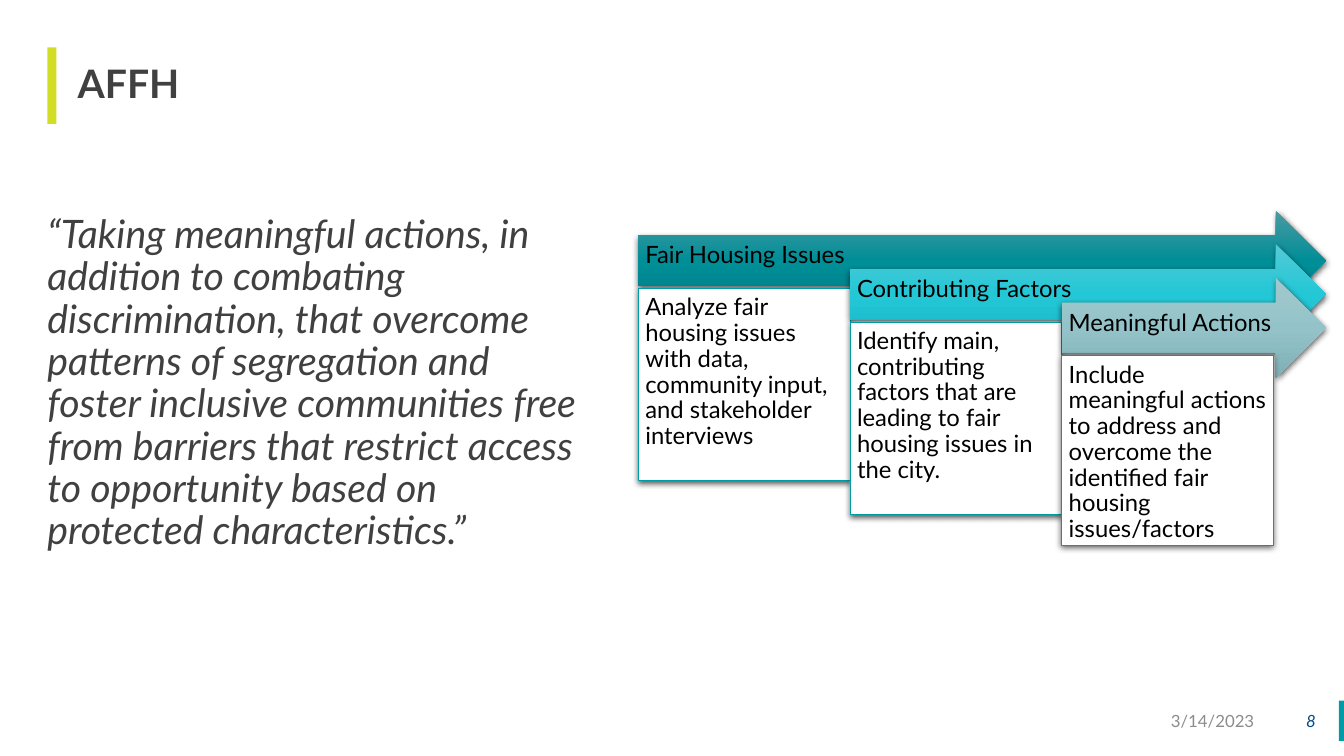
from dataclasses import dataclass

from pptx import Presentation
from pptx.dml.color import RGBColor
from pptx.enum.shapes import MSO_SHAPE
from pptx.enum.text import MSO_ANCHOR, MSO_AUTO_SIZE, PP_ALIGN
from pptx.oxml import parse_xml
from pptx.oxml.ns import nsdecls, qn
from pptx.util import Inches, Pt

ARROW, RECTANGLE = MSO_SHAPE.RIGHT_ARROW, MSO_SHAPE.RECTANGLE
TOP, MIDDLE = MSO_ANCHOR.TOP, MSO_ANCHOR.MIDDLE
LEFT, RIGHT = PP_ALIGN.LEFT, PP_ALIGN.RIGHT
FIXED = MSO_AUTO_SIZE.NONE


@dataclass(frozen=True)
class Theme:
    font: str = "Lato"
    ink: str = "404040"
    black: str = "000000"
    white: str = "FFFFFF"
    muted: str = "8C8C8C"
    navy: str = "004B87"
    teal: str = "009CA6"
    lime: str = "D2DE26"
    heading: int = 28
    step: int = 17
    footer: int = 12


class Deck:
    """Holds the theme and the current slide; places are percent of the slide."""

    def __init__(self, theme):
        self.theme = theme
        self.show = Presentation()
        self.show.slide_width, self.show.slide_height = Inches(13.33), Inches(7.5)
        self.slide = self.show.slides.add_slide(self.show.slide_layouts[1])

    def lengths(self, place):
        sides = (self.show.slide_width, self.show.slide_height) * 2
        return [round(side * share / 100) for side, share in zip(sides, place)]

    def set_text(self, shape, text, size, color, insets, anchor=MIDDLE, align=LEFT,
                 spacing=0.9, **style):
        frame = shape.text_frame
        frame.text = text
        margins = zip(("left", "top", "right", "bottom"), insets)
        layout = {f"margin_{side}": Inches(inset) for side, inset in margins}
        layout |= {"word_wrap": True, "auto_size": FIXED, "vertical_anchor": anchor}
        for name, value in layout.items():
            setattr(frame, name, value)
        paragraph = frame.paragraphs[0]
        for name, value in {"alignment": align, "line_spacing": spacing,
                            "space_before": Pt(0)}.items():
            setattr(paragraph, name, value)
        font = paragraph.runs[0].font
        for name, value in {"name": self.theme.font, "size": Pt(size), **style}.items():
            setattr(font, name, value)
        font.color.rgb = RGBColor.from_string(color)

    def placeholder(self, index, place, text, insets, **style):
        holder = self.slide.placeholders[index]
        for name, value in zip(("left", "top", "width", "height"), self.lengths(place)):
            setattr(holder, name, value)
        self.set_text(holder, text, self.theme.heading, self.theme.ink, insets, **style)
        return holder

    def title(self, place, text):
        self.placeholder(0, place, text, (0.2, 0, 0, 0), bold=True)

    def quote(self, place, text):
        holder = self.placeholder(1, place, text, (0, 0, 0, 0), italic=True)
        properties = holder.text_frame.paragraphs[0]._p.get_or_add_pPr()
        for name in ("marL", "indent"):
            properties.set(name, "0")
        properties.append(parse_xml(f"<a:buNone {nsdecls('a')}/>"))

    def footer(self, place, text, color, **style):
        box = self.slide.shapes.add_textbox(*self.lengths(place))
        self.set_text(box, text, self.theme.footer, color, (0.1, 0.05, 0.1, 0.05),
                      align=RIGHT, spacing=1.0, **style)

    def shape(self, kind, place, fill=None, line=None):
        shape = self.slide.shapes.add_shape(kind, *self.lengths(place))
        shape.shadow.inherit = False
        if fill:
            shape.fill.solid()
            shape.fill.fore_color.rgb = RGBColor.from_string(fill)
        if line:
            shape.line.color.rgb = RGBColor.from_string(line)
            shape.line.width = Pt(0.5)
        else:
            shape.line.fill.background()
        return shape

    def cast_shadow(self, shape):
        effects = shape.element.spPr.find(qn("a:effectLst"))
        effects.append(parse_xml(
            f'<a:outerShdw {nsdecls("a")} blurRad="{Pt(4.5)}" dist="{Pt(1.5)}" '
            f'dir="5400000" algn="ctr" rotWithShape="0">'
            f'<a:srgbClr val="{self.theme.black}"><a:alpha val="63000"/></a:srgbClr>'
            "</a:outerShdw>"))

    def arrow(self, place, text, shades):
        arrow = self.shape(ARROW, place)
        stops = "".join(f'<a:gs pos="{half * 50000}"><a:srgbClr val="{shade}"/></a:gs>'
                        for half, shade in enumerate(shades))
        arrow.element.spPr.find(qn("a:prstGeom")).addnext(parse_xml(
            f'<a:gradFill {nsdecls("a")} rotWithShape="1"><a:gsLst>{stops}</a:gsLst>'
            '<a:lin ang="5400000" scaled="0"/></a:gradFill>'))
        self.cast_shadow(arrow)
        self.set_text(arrow, text, self.theme.step, self.theme.black,
                      (0.07, 0.07, 0.28, 0.16))

    def card(self, place, text):
        card = self.shape(RECTANGLE, place, self.theme.white, self.theme.teal)
        self.cast_shadow(card)
        self.set_text(card, text, self.theme.step, self.theme.black, (0.07,) * 4,
                      anchor=TOP)


# Each step: heading, gradient shades, explanation, card height
STEPS = [
    ("Fair Housing Issues", ("4B9AA2", "008E97", "007E86"),
     "Analyze fair housing issues with data, community input, "
     "and stakeholder interviews", 25.47),
    ("Contributing Factors", ("53CAD7", "23C7D6", "18B7C5"),
     "Identify main, contributing factors that are leading to fair "
     "housing issues in the city.", 25.47),
    ("Meaningful Actions", ("A2C9CD", "93C3C9", "7FB0B6"),
     "Include meaningful actions to address and overcome the identified "
     "fair housing issues/factors", 25.07),
]
STEPS_LEFT, STEPS_TOP, STEPS_END = 47.49, 27.87, 98.65
COLUMN, ROW = 15.75, 4.45
ARROW_HEIGHT, CARD_DROP = 13.2, 10.27
FOOTER_TOP, FOOTER_HEIGHT = 92.67, 5.33


def main():
    theme = Theme()
    deck = Deck(theme)

    # Accent bars
    deck.shape(RECTANGLE, (99.62, FOOTER_TOP, 0.38, FOOTER_HEIGHT), theme.teal)
    deck.shape(RECTANGLE, (3.53, 6.27, 0.68, 10.13), theme.lime)

    # Title and definition
    deck.title((4.28, 6.27, 92.35, 10.13), "AFFH")
    deck.quote((3.53, 19.87, 40.21, 61.87),
               "“Taking meaningful actions, in addition to combating discrimination, "
               "that overcome patterns of segregation and foster inclusive communities "
               "free from barriers that restrict access to opportunity based on "
               "protected characteristics.”")

    # Date and page number
    deck.footer((71.57, FOOTER_TOP, 22.5, FOOTER_HEIGHT), "3/14/2023", theme.muted)
    deck.footer((94.07, FOOTER_TOP, 4.58, FOOTER_HEIGHT), "8", theme.navy, italic=True)

    # Cascading steps
    for number, (heading, shades, explanation, height) in enumerate(STEPS):
        left, top = STEPS_LEFT + number * COLUMN, STEPS_TOP + number * ROW
        deck.arrow((left, top, STEPS_END - left, ARROW_HEIGHT), heading, shades)
        deck.card((left, top + CARD_DROP, COLUMN, height), explanation)

    deck.show.save("out.pptx")


if __name__ == "__main__":
    main()
